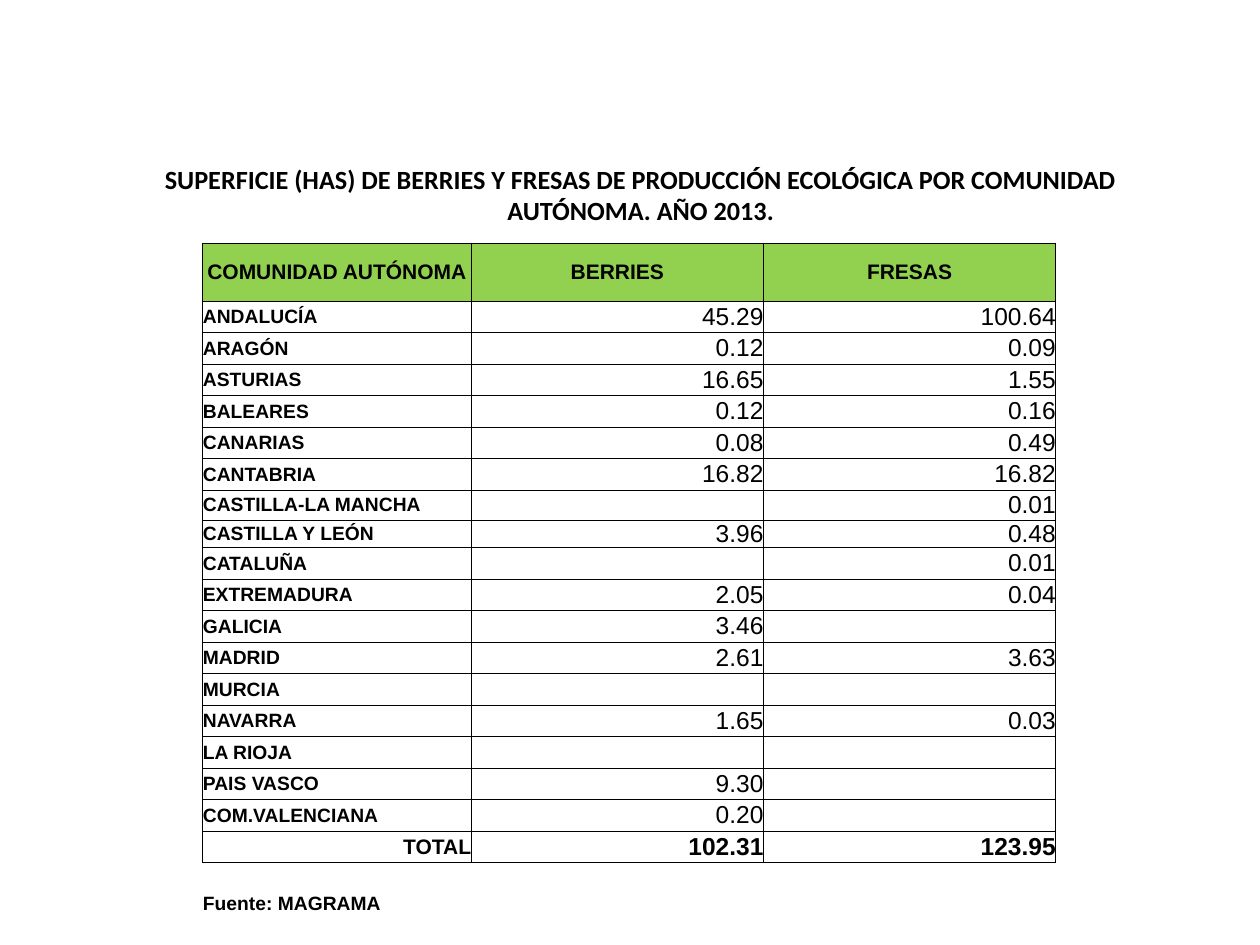
from dataclasses import dataclass

from lxml import etree
from pptx import Presentation
from pptx.dml.color import RGBColor
from pptx.enum.text import MSO_ANCHOR, PP_ALIGN
from pptx.oxml.ns import qn
from pptx.util import Pt

LEFT, CENTER, RIGHT = PP_ALIGN.LEFT, PP_ALIGN.CENTER, PP_ALIGN.RIGHT
MIDDLE, BOTTOM = MSO_ANCHOR.MIDDLE, MSO_ANCHOR.BOTTOM
PX = 9144


@dataclass(frozen=True)
class Theme:
    ink: str = "000000"
    header: str = "92D050"
    title_font: str = "Calibri"
    table_font: str = "Arial"
    title_size: int = 15
    header_size: int = 12
    label_size: int = 11
    value_size: int = 14
    border: float = 0.5


@dataclass(frozen=True)
class CellStyle:
    size: int
    bold: bool = True
    align: PP_ALIGN = LEFT
    anchor: MSO_ANCHOR = MIDDLE
    fill: str = ""
    sides: str = "LRTB"


@dataclass(frozen=True)
class Row:
    texts: tuple[str, str, str]
    styles: tuple[CellStyle, CellStyle, CellStyle]
    height: int = 25


T = Theme()
HEADER = CellStyle(T.header_size, align=CENTER, fill=T.header)
LABEL = CellStyle(T.label_size)
VALUE = CellStyle(T.value_size, bold=False, align=RIGHT)
TOTAL_LABEL = CellStyle(T.header_size, align=RIGHT)
TOTAL = CellStyle(T.value_size, align=RIGHT)
SPACER = CellStyle(T.label_size, sides="T")
SOURCE = CellStyle(T.label_size, anchor=BOTTOM, sides="")

REGIONS = [
    ("ANDALUCÍA", "45.29", "100.64"),
    ("ARAGÓN", "0.12", "0.09"),
    ("ASTURIAS", "16.65", "1.55"),
    ("BALEARES", "0.12", "0.16"),
    ("CANARIAS", "0.08", "0.49"),
    ("CANTABRIA", "16.82", "16.82"),
    ("CASTILLA-LA MANCHA", "", "0.01"),
    ("CASTILLA Y LEÓN", "3.96", "0.48"),
    ("CATALUÑA", "", "0.01"),
    ("EXTREMADURA", "2.05", "0.04"),
    ("GALICIA", "3.46", ""),
    ("MADRID", "2.61", "3.63"),
    ("MURCIA", "", ""),
    ("NAVARRA", "1.65", "0.03"),
    ("LA RIOJA", "", ""),
    ("PAIS VASCO", "9.30", ""),
    ("COM.VALENCIANA", "0.20", ""),
]
ROWS = [
    Row(("COMUNIDAD AUTÓNOMA", "BERRIES", "FRESAS"), (HEADER,) * 3, 46),
    *(Row(region, (LABEL, VALUE, VALUE), 22 if region[0].startswith("CASTILLA") else 25)
      for region in REGIONS),
    Row(("TOTAL", "102.31", "123.95"), (TOTAL_LABEL, TOTAL, TOTAL)),
    Row(("", "", ""), (SPACER,) * 3, 20),
    Row(("Fuente: MAGRAMA", "", ""), (SOURCE,) * 3, 21),
]
COLUMNS = (213, 232, 232)


def add_run(p, text: str, font: str, size: int, bold: bool) -> None:
    r = p.add_run()
    r.text = text
    r.font.name = font
    r.font.size = Pt(size)
    r.font.bold = bold
    r.font.color.rgb = RGBColor.from_string(T.ink)


def set_borders(cell, sides: str) -> None:
    tc_pr = cell._tc.get_or_add_tcPr()
    for side in "LRTB":
        ln = etree.SubElement(tc_pr, qn(f"a:ln{side}"), w=str(Pt(T.border)))
        if side in sides:
            fill = etree.SubElement(ln, qn("a:solidFill"))
            etree.SubElement(fill, qn("a:srgbClr"), val=T.ink)
        else:
            etree.SubElement(ln, qn("a:noFill"))


def fill_cell(cell, text: str, style: CellStyle) -> None:
    cell.margin_left = cell.margin_right = cell.margin_top = cell.margin_bottom = 0
    cell.vertical_anchor = style.anchor
    set_borders(cell, style.sides)
    if style.fill:
        cell.fill.solid()
        cell.fill.fore_color.rgb = RGBColor.from_string(style.fill)
    else:
        cell.fill.background()
    p = cell.text_frame.paragraphs[0]
    p.alignment = style.align
    if text:
        add_run(p, text, T.table_font, style.size, style.bold)
    else:
        etree.SubElement(p._p, qn("a:endParaRPr"), sz=str(style.size * 100))


def add_title(s, text: str) -> None:
    sp = s.shapes.title
    sp.left, sp.top, sp.width, sp.height = (v * PX for v in (67, 115, 883, 79))
    tf = sp.text_frame
    tf.word_wrap = True
    tf.vertical_anchor = MIDDLE
    p = tf.paragraphs[0]
    p.alignment = CENTER
    add_run(p, text, T.title_font, T.title_size, True)


def add_region_table(s, rows: list[Row], columns: tuple[int, ...]) -> None:
    height = sum(row.height for row in rows)
    table = s.shapes.add_table(len(rows), len(columns), 161 * PX, 193 * PX,
                               sum(columns) * PX, height * PX).table
    table.first_row = table.horz_banding = False
    for column, width in zip(table.columns, columns):
        column.width = width * PX
    for i, row in enumerate(rows):
        table.rows[i].height = row.height * PX
        for j, (text, style) in enumerate(zip(row.texts, row.styles)):
            fill_cell(table.cell(i, j), text, style)
    last = len(rows) - 1
    table.cell(last, 0).merge(table.cell(last, 1))


def main() -> None:
    prs = Presentation()
    prs.slide_width, prs.slide_height = 1000 * PX, 750 * PX
    s = prs.slides.add_slide(prs.slide_layouts[5])
    add_title(s, "SUPERFICIE (HAS) DE BERRIES Y FRESAS DE PRODUCCIÓN ECOLÓGICA "
                 "POR COMUNIDAD AUTÓNOMA. AÑO 2013.")
    add_region_table(s, ROWS, COLUMNS)
    prs.save("out.pptx")


if __name__ == "__main__":
    main()
